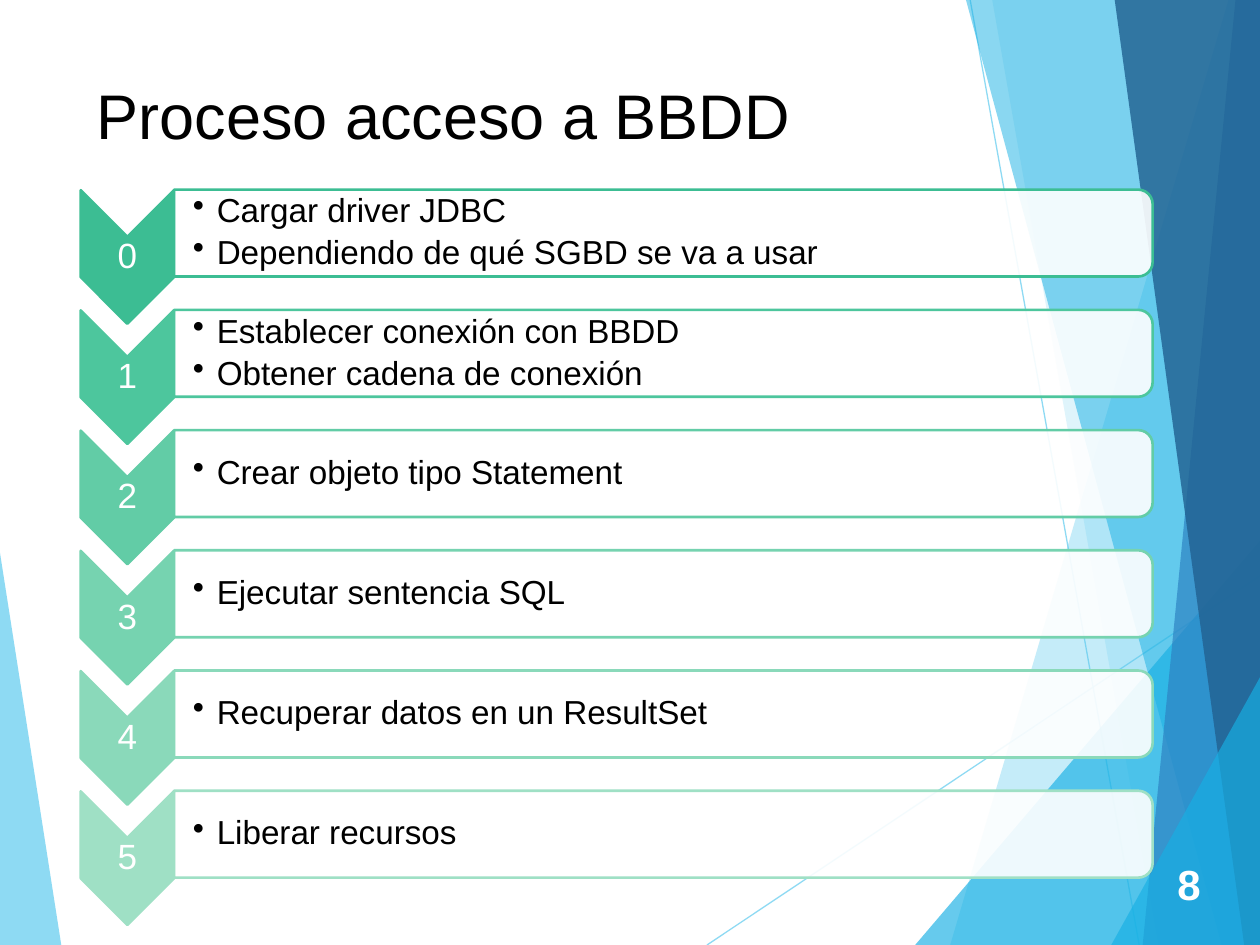
"""Build a slide listing the six steps of database access."""
from lxml.etree import SubElement
from pptx import Presentation
from pptx.dml.color import RGBColor
from pptx.enum.shapes import MSO_CONNECTOR, MSO_SHAPE
from pptx.enum.text import MSO_ANCHOR, PP_ALIGN
from pptx.oxml.ns import qn
from pptx.util import Pt


def paint(fill, color, opacity=100):
    fill.solid()
    fill.fore_color.rgb = RGBColor.from_string(color)
    if opacity < 100:
        tint = fill._xPr.find(qn("a:solidFill"))[0]
        SubElement(tint, qn("a:alpha")).set("val", str(opacity * 1000))


def add_text(page, bounds, lines, size, color, align=PP_ALIGN.LEFT, margins=(7.2, 3.6, 7.2, 3.6)):
    box = page.shapes.add_textbox(*map(Pt, bounds))
    frame = box.text_frame
    frame.word_wrap = True
    frame.vertical_anchor = MSO_ANCHOR.MIDDLE
    frame.margin_left, frame.margin_top, frame.margin_right, frame.margin_bottom = map(Pt, margins)
    frame.text = "\n".join(lines)
    for para in frame.paragraphs:
        para.alignment = align
        para.font.name = "Arial"
        para.font.size = Pt(size)
        paint(para.font.fill, color)
    return frame.paragraphs


deck = Presentation()
deck.slide_width, deck.slide_height = Pt(720), Pt(540)
page = deck.slides.add_slide(deck.slide_layouts[6])

left_wedge = ("5FCBEF", 70, [(0, 316), (35.3, 540), (0, 540)])
right_facets = [
    ("5FCBEF", 36, [(702, 0), (543, 540), (720, 540), (720, 0)]),
    ("5FCBEF", 20, [(567.4, 0), (661.7, 540), (720, 540), (720, 0)]),
    ("17B0E4", 66, [(522.7, 540), (720, 309), (720, 540)]),
    ("17B0E4", 50, [(552.2, 0), (698.4, 540), (720, 540), (720, 0)]),
    ("2E83C3", 70, [(706.3, 0), (653, 540), (720, 540), (720, 0)]),
    ("226292", 82, [(637.2, 0), (711.4, 540), (720, 540), (720, 0)]),
    ("17B0E4", 66, [(635, 540), (720, 387), (720, 540)]),
]
for start_x, start_y, end_x, end_y in [(404, 540, 720, 329), (554.4, 0, 651, 540)]:
    ray = page.shapes.add_connector(
        MSO_CONNECTOR.STRAIGHT, Pt(start_x), Pt(start_y), Pt(end_x), Pt(end_y))
    ray.line.width = Pt(0.75)
    paint(ray.line.fill, "5FCBEF", 70)
    SubElement(ray._element.spPr, qn("a:effectLst"))

for color, opacity, points in [left_wedge, *right_facets]:
    builder = page.shapes.build_freeform(*points[0], scale=Pt(1))
    builder.add_line_segments(points[1:], close=True)
    facet = builder.convert_to_shape()
    facet.shadow.inherit = False
    facet.line.fill.background()
    paint(facet.fill, color, opacity)

number = add_text(page, (624.2, 490.3, 69, 28.8), ["8"], 24, "FFFFFF", PP_ALIGN.RIGHT)[0]
number.font.bold = True
add_text(page, (48.2, 36, 499.7, 59), ["Proceso acceso a BBDD"], 36, "000000")

steps = [
    ("3CBD93", ["Cargar driver JDBC", "Dependiendo de qué SGBD se va a usar"]),
    ("4DC69D", ["Establecer conexión con BBDD", "Obtener cadena de conexión"]),
    ("62CCA6", ["Crear objeto tipo Statement"]),
    ("76D3B0", ["Ejecutar sentencia SQL"]),
    ("8AD9BA", ["Recuperar datos en un ResultSet"]),
    ("9FE0C5", ["Liberar recursos"]),
]
for index, (color, lines) in enumerate(steps):
    middle = 133.2 + index * 68.7
    for kind, left, top, width, height, fill, opacity in [
        (MSO_SHAPE.CHEVRON, 34.6, middle - 13, 76.3, 53.3, color, 100),
        (MSO_SHAPE.ROUND_2_SAME_RECTANGLE, 354.2, middle - 279.6, 49.7, 559.2, "FFFFFF", 90),
    ]:
        shape = page.shapes.add_shape(kind, Pt(left), Pt(top), Pt(width), Pt(height))
        shape.rotation = 90
        shape.shadow.inherit = False
        shape.line.width = Pt(1.5)
        paint(shape.line.fill, color)
        paint(shape.fill, fill, opacity)

    digit = add_text(page, (46.1, middle + 2.2, 53.3, 23), [str(index)], 20, "FFFFFF",
                     PP_ALIGN.CENTER, (0.7, 0.7, 0.7, 0.7))[0]
    digit.line_spacing = 0.9
    digit.space_after = Pt(7)
    for para in add_text(page, (99.4, middle - 22.3, 556.6, 44.6), lines, 19, "000000",
                         margins=(10.8, 0.7, 0.7, 0.7)):
        para.line_spacing = 0.9
        para.space_after = Pt(3.5)
        properties = para._p.get_or_add_pPr()
        properties.set("marL", str(Pt(13.7)))
        properties.set("indent", str(-Pt(13.7)))
        bullet = properties.makeelement(qn("a:buChar"), {"char": "•"})
        properties.find(qn("a:defRPr")).addprevious(bullet)

deck.save("out.pptx")
